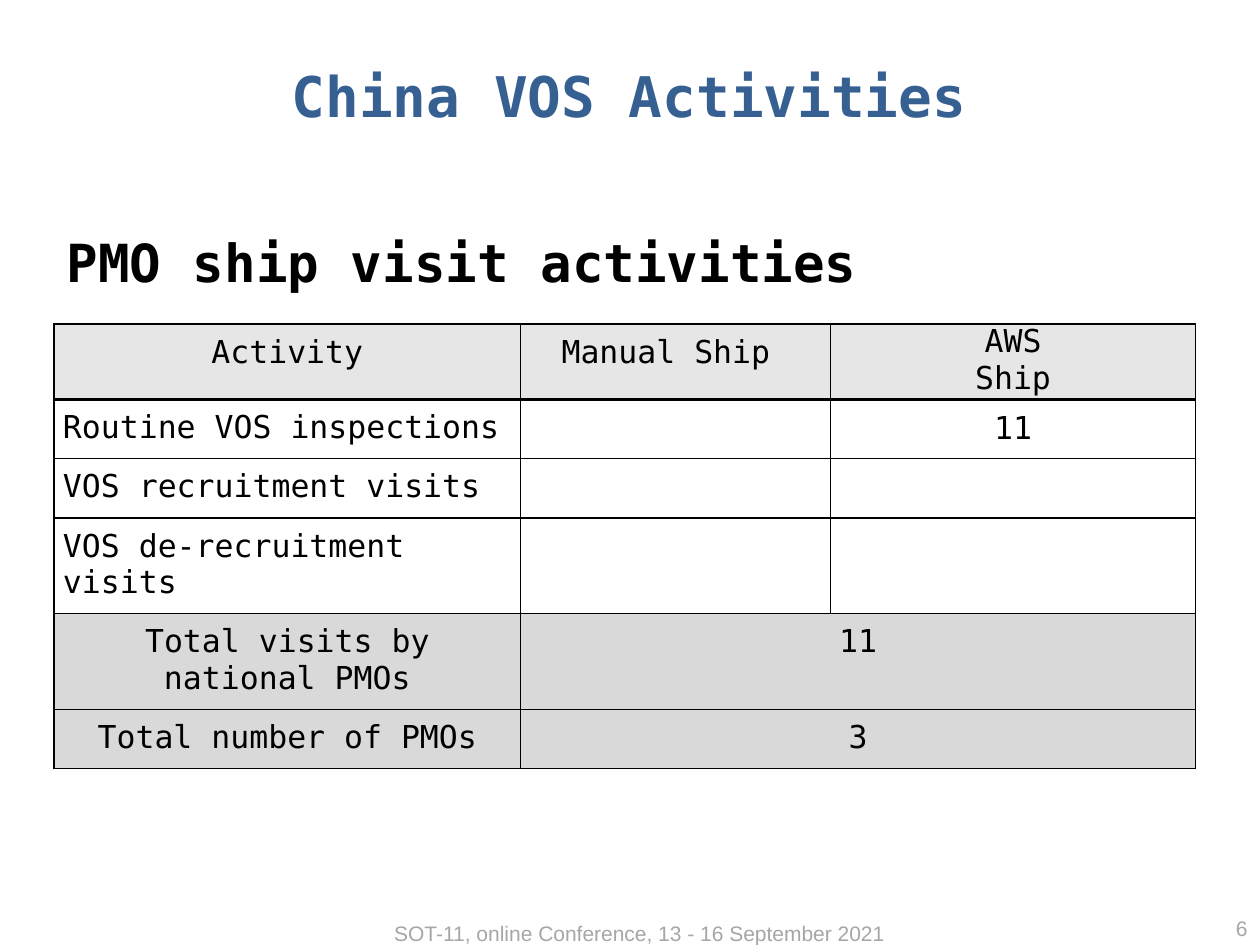
from lxml.etree import SubElement
from pptx import Presentation
from pptx.dml.color import RGBColor
from pptx.enum.text import MSO_ANCHOR, MSO_AUTO_SIZE, PP_ALIGN
from pptx.oxml.ns import qn
from pptx.util import Inches, Pt

MONO, SANS = "DejaVu Sans Mono", "Arial"
LEFT, MID, RIGHT = PP_ALIGN.LEFT, PP_ALIGN.CENTER, PP_ALIGN.RIGHT
BLACK, BLUE, GREY, HEAD, TOTAL = "000000", "376092", "A6A6A6", "E6E6E6", "D9D9D9"


def color(code):
    return RGBColor.from_string(code)


class Deck:
    """Holds the style and the current slide."""

    def __init__(self):
        self.prs = Presentation()
        self.prs.slide_width, self.prs.slide_height = Inches(10), Inches(7.5)
        self.slide = self.prs.slides.add_slide(self.prs.slide_layouts[5])

    def style(self, frame, size, code=BLACK, align=LEFT, bold=False, face=MONO):
        for para in frame.paragraphs:
            para.alignment = align
            font = para.font
            font.name, font.size, font.bold = face, Pt(size), bold
            font.color.rgb = color(code)

    def title(self, text, box):
        shape = self.slide.shapes.title
        shape.left, shape.top, shape.width, shape.height = map(Inches, box)
        frame = shape.text_frame
        frame.text = text
        frame.auto_size = MSO_AUTO_SIZE.NONE
        frame.vertical_anchor = MSO_ANCHOR.TOP
        self.style(frame, 32, BLUE, MID, True)

    def text(self, text, box, anchor=MSO_ANCHOR.TOP, **look):
        frame = self.slide.shapes.add_textbox(*map(Inches, box)).text_frame
        frame.text = text
        frame.word_wrap = True
        frame.vertical_anchor = anchor
        self.style(frame, **look)

    def border(self, cell, widths):
        props = cell._tc.get_or_add_tcPr()
        for side, width in zip("LRTB", widths):
            line = SubElement(props, qn(f"a:ln{side}"), w=str(Pt(width)))
            fill = SubElement(line, qn("a:solidFill"))
            SubElement(fill, qn("a:srgbClr"), val=BLACK)

    def cell(self, cell, text, align, fill, widths, pad=0.08):
        cell.text = text
        cell.margin_left = cell.margin_right = Inches(0.07)
        cell.margin_top = cell.margin_bottom = Inches(pad)
        self.style(cell.text_frame, 18, align=align)
        self.border(cell, widths)
        if fill:
            cell.fill.solid()
            cell.fill.fore_color.rgb = color(fill)
        else:
            cell.fill.background()

    def table(self, rows, box, cols, height):
        frame = self.slide.shapes.add_table(len(rows), len(cols), *map(Inches, box))
        table = frame.table
        for col, width in zip(table.columns, cols):
            col.width = Inches(width)
        for r, (fill, texts) in enumerate(rows):
            table.rows[r].height = Inches(height)
            for c, text in enumerate(texts):
                align = LEFT if c == 0 and not fill else MID
                widths = (1 if c else 1.5, 1, 1.5 if r == 1 else 1, 1 if r else 1.5)
                pad = 0 if c == 2 and r < 2 else 0.08
                self.cell(table.cell(r, c), text, align, fill, widths, pad)
            if fill == TOTAL:
                table.cell(r, 1).merge(table.cell(r, 2))
        table.cell(1, 2).vertical_anchor = MSO_ANCHOR.MIDDLE


def main():
    deck = Deck()
    deck.text("SOT-11, online Conference, 13 - 16 September 2021",
              (3.03, 7.26, 4.88, 0.3), size=12, code=GREY, face=SANS)
    deck.text("PMO ship visit activities", (0.43, 1.78, 9, 0.7), size=30, bold=True)
    deck.text("6", (7.75, 7.24, 2.25, 0.25), MSO_ANCHOR.MIDDLE,
              size=12, code=GREY, align=RIGHT, face=SANS)
    deck.title("China VOS Activities", (0.74, 0.44, 8.51, 0.81))
    rows = [
        (HEAD, ("Activity", "Manual Ship ", "AWS\nShip")),
        (None, ("Routine VOS inspections", "", "11")),
        (None, ("VOS recruitment visits", "", "")),
        (None, ("VOS de-recruitment visits", "", "")),
        (TOTAL, ("Total visits by national PMOs", "11", "")),
        (TOTAL, ("Total number of PMOs", "3", "")),
    ]
    deck.table(rows, (0.43, 2.57, 9.06, 2.82), (3.7, 2.46, 2.9), 0.47)
    deck.prs.save("out.pptx")


if __name__ == "__main__":
    main()
